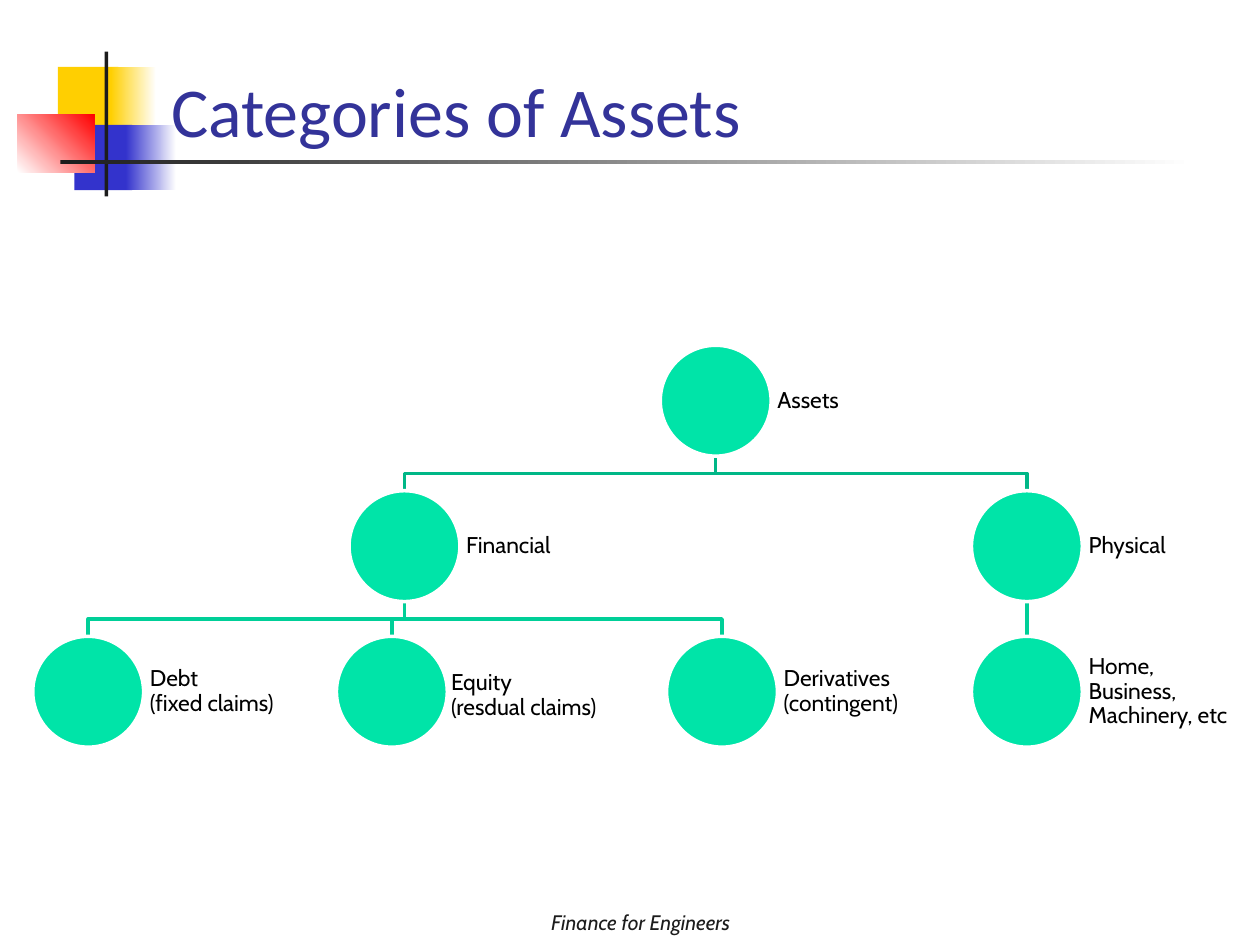
import copy

import pptx
import pptx.dml.color
import pptx.enum.shapes
import pptx.enum.text
import pptx.oxml
import pptx.oxml.ns
import pptx.util
from pptx.util import Inches

SHAPES = pptx.enum.shapes.MSO_SHAPE
ANCHOR = pptx.enum.text.MSO_ANCHOR
ALIGN = pptx.enum.text.PP_ALIGN

DIAMETER = 0.88
TOP_LEVEL = 2.74
LEVEL_STEP = 1.155

# text, centre, level, parent, label offset (x, y), label width
NODES = [
    ("Assets", 5.68, 0, None, (0, 0), 1.32),
    ("Financial", 3.21, 1, "Assets", (0, 0), 1.32),
    ("Debt\n(fixed claims)", 0.7, 2, "Financial", (0, 0), 1.32),
    ("Equity\n(resdual claims)", 3.11, 2, "Financial", (-0.02, 0.03), 1.72),
    ("Derivatives\n(contingent)", 5.73, 2, "Financial", (0, 0), 1.32),
    ("Physical", 8.15, 1, "Assets", (0, 0), 1.32),
    ("Home, Business, Machinery, etc", 8.15, 2, "Physical", (0, 0), 1.32),
]
BRANCH_COLORS = {1: "00B787", 2: "00CF98"}

# left, top, width, height, colours from start to end, angle
ORNAMENTS = [
    (0.46, 0.53, 0.48, 0.52, ["FFCF01"], 0),
    (0.88, 0.53, 0.36, 0.52, ["FFCF01", "FFFFFF"], 0),
    (0.59, 0.99, 0.46, 0.52, ["3333CC"], 0),
    (1, 0.99, 0.4, 0.52, ["3333CC", "FFFFFF"], 0),
    (0.14, 0.91, 0.61, 0.46, ["FFFFFF", "FF0000"], 45),
    (0.83, 0.41, 0.03, 1.15, ["1C1C1C"], 0),
    (0.48, 1.27, 9, 0.03, ["1C1C1C", "FFFFFF"], 0),
]


def color(hex_string):
    return pptx.dml.color.RGBColor.from_string(hex_string)


def write_text(frame, text, size, font="Cabin", fill="000000", italic=False,
               align=ALIGN.LEFT, line_spacing=None):
    paragraph = frame.paragraphs[0]
    paragraph.text = text
    paragraph.alignment = align
    paragraph.line_spacing = line_spacing
    for run in paragraph.runs:
        run.font.size = pptx.util.Pt(size)
        run.font.name = font
        run.font.italic = italic
        run.font.color.rgb = color(fill)
    # Line breaks take the run format so that they keep the line height.
    for line_break in paragraph._p.findall(pptx.oxml.ns.qn("a:br")):
        line_break.append(copy.deepcopy(paragraph.runs[0]._r.rPr))


class AssetSlide:
    """Holds the slide and the line and circle style."""

    circle_fill = "00E4A8"
    circle_line = "FFFFFF"
    line_width = pptx.util.Pt(2)

    def __init__(self, presentation):
        self.slide = presentation.slides.add_slide(presentation.slide_layouts[6])
        self.shapes = self.slide.shapes

    def outline(self, shape, line_color):
        shape.line.color.rgb = color(line_color)
        shape.line.width = self.line_width

    def rectangle(self, left, top, width, height, colors, angle):
        shape = self.shapes.add_shape(SHAPES.RECTANGLE, Inches(left), Inches(top),
                                      Inches(width), Inches(height))
        shape.shadow.inherit = False
        shape.line.fill.background()
        if len(colors) == 1:
            shape.fill.solid()
            shape.fill.fore_color.rgb = color(colors[0])
        else:
            shape.fill.gradient()
            shape.fill.gradient_angle = angle
            for stop, stop_color in zip(shape.fill.gradient_stops, colors):
                stop.color.rgb = color(stop_color)

    def circle(self, center, top):
        shape = self.shapes.add_shape(SHAPES.OVAL, Inches(center - DIAMETER / 2), Inches(top),
                                      Inches(DIAMETER), Inches(DIAMETER))
        shape.shadow.inherit = False
        shape.fill.solid()
        shape.fill.fore_color.rgb = color(self.circle_fill)
        self.outline(shape, self.circle_line)

    def branch(self, start, end, top, bottom, line_color):
        """Draw a straight drop, or an elbow when the ends are not aligned."""
        if start == end:
            line = self.shapes.add_connector(pptx.enum.shapes.MSO_CONNECTOR.STRAIGHT,
                                             Inches(start), Inches(top),
                                             Inches(end), Inches(bottom))
            line._element.spPr.append(pptx.oxml.parse_xml(
                f"<a:effectLst {pptx.oxml.ns.nsdecls('a')}/>"))
            self.outline(line, line_color)
            # The effect list must follow the line properties.
            line._element.spPr.append(line._element.spPr.find(pptx.oxml.ns.qn("a:effectLst")))
            return
        middle = (top + bottom) / 2
        builder = self.shapes.build_freeform(Inches(start), Inches(top))
        builder.add_line_segments([(Inches(x), Inches(y)) for x, y in
                                   ((start, middle), (end, middle), (end, bottom))], close=False)
        line = builder.convert_to_shape()
        line.shadow.inherit = False
        line.fill.background()
        self.outline(line, line_color)

    def text(self, left, top, width, height, text, anchor=ANCHOR.MIDDLE, inset=0.05, **text_format):
        box = self.shapes.add_textbox(Inches(left), Inches(top), Inches(width), Inches(height))
        frame = box.text_frame
        frame.word_wrap = True
        frame.vertical_anchor = anchor
        frame.margin_left = frame.margin_right = Inches(inset)
        frame.margin_top = frame.margin_bottom = Inches(0.05)
        write_text(frame, text, **text_format)


def level_top(level):
    return TOP_LEVEL + level * LEVEL_STEP


def main():
    presentation = pptx.Presentation()
    presentation.slide_width = Inches(10)
    presentation.slide_height = Inches(7.5)
    slide = AssetSlide(presentation)

    for ornament in ORNAMENTS:
        slide.rectangle(*ornament)
    slide.text(3.92, 7.17, 2.33, 0.33, "Finance for Engineers", anchor=ANCHOR.TOP, inset=0.1,
               size=12, fill="1C1C1C", italic=True, align=ALIGN.CENTER)
    slide.text(1.26, 0, 8.52, 1.25, "Categories of Assets", anchor=ANCHOR.BOTTOM, inset=0.1,
               size=40, font="Calibri", fill="333399")

    centers = {text: center for text, center, *_ in NODES}
    for _, center, level, parent, _, _ in NODES:
        if parent:
            slide.branch(centers[parent], center, level_top(level - 1) + DIAMETER,
                         level_top(level), BRANCH_COLORS[level])
    for text, center, level, _, (shift_x, shift_y), width in NODES:
        top = level_top(level)
        slide.circle(center, top)
        slide.text(center + DIAMETER / 2 + shift_x, top + shift_y, width, DIAMETER, text,
                   size=13, line_spacing=0.9)

    presentation.save("out.pptx")


if __name__ == "__main__":
    main()
